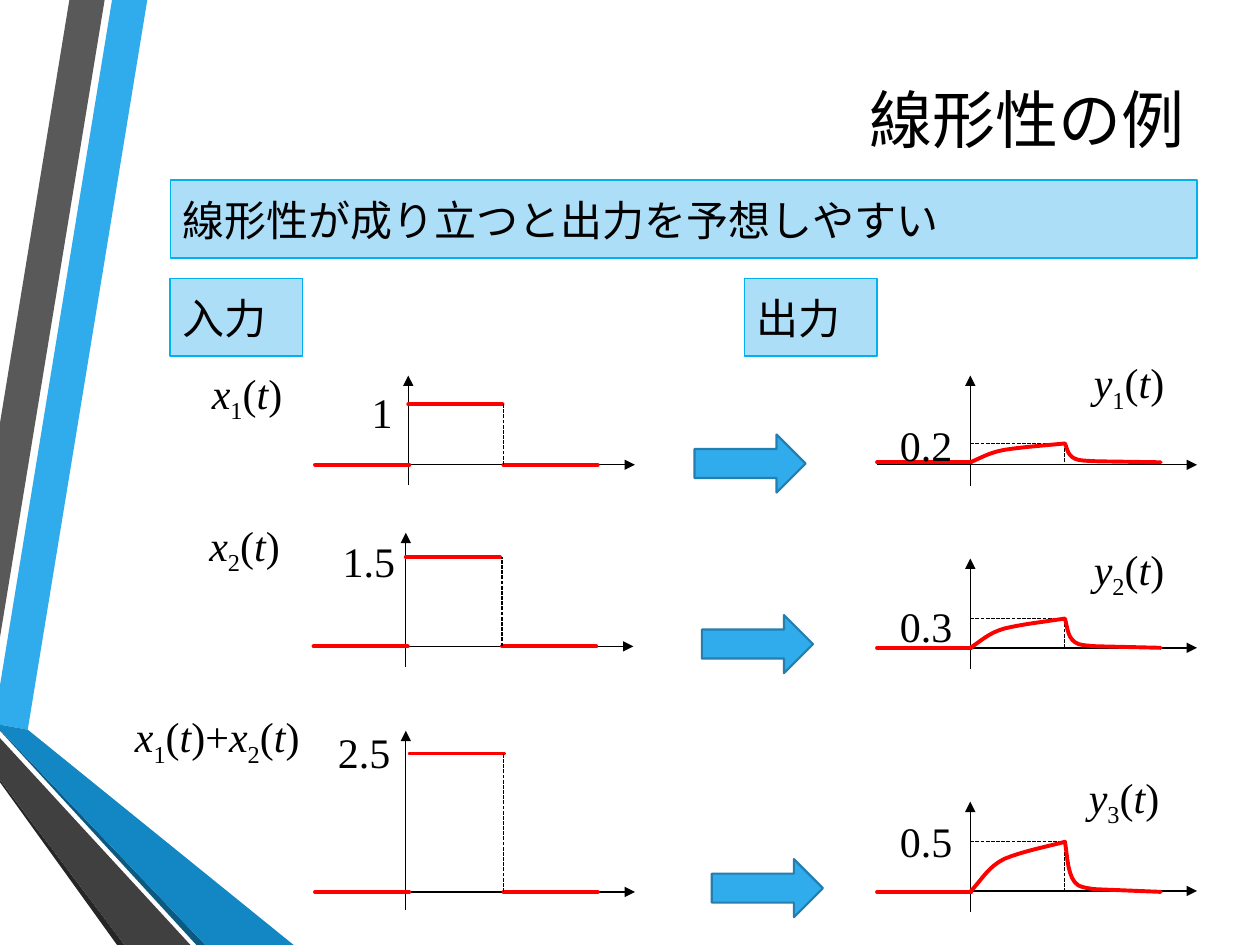
from dataclasses import dataclass
from itertools import groupby

from lxml.etree import SubElement
from pptx import Presentation
from pptx.dml.color import RGBColor
from pptx.enum.dml import MSO_LINE
from pptx.enum.shapes import MSO_CONNECTOR, MSO_SHAPE
from pptx.enum.text import MSO_ANCHOR, MSO_AUTO_SIZE, PP_ALIGN
from pptx.oxml.ns import qn
from pptx.util import Cm, Pt


@dataclass(frozen=True)
class Theme:
    title_font: str = "Cabin"
    body_font: str = "Times New Roman"
    title_size: float = 36
    body_size: float = 24
    line_spacing: float = 33.6
    paragraph_gap: float = 6
    thin: float = 0.75
    medium: float = 1.25
    thick: float = 2.25
    ink: str = "000000"
    signal: str = "FF0000"
    box_fill: str = "ACDEF7"
    box_line: str = "00B0F0"
    accent: str = "30ACEC"
    accent_line: str = "247FAF"


FACETS = [
    ("30ACEC", [(0, 13.82), (0, 14.61), (0.56, 14.71), (2.97, 0), (2.26, 0)]),
    ("595959", [(2.11, 0), (1.4, 0), (0, 8.53), (0, 12.85)]),
    ("262626", [(0, 15.72), (0, 15.77), (2.36, 19.05), (2.51, 19.05)]),
    ("0C5A82", [(0, 14.71), (0, 14.73), (3.96, 19.05), (4.14, 19.05)]),
    ("1287C3", [(0, 14.71), (4.14, 19.05), (5.92, 19.05), (0.56, 14.71), (0, 14.61)]),
    ("404040", [(0, 15.72), (2.51, 19.05), (3.84, 19.05), (0, 14.88)]),
]

# Response curve: cm from the axis, and share of the peak height.
RESPONSE = [
    [(0, 0), (0.23, 0.24), (0.36, 0.5), (0.69, 0.66)],
    [(0.69, 0.66), (1.09, 0.82), (1.5, 0.89), (1.91, 1)],
    [(1.91, 1), (1.96, 0.71), (1.96, 0.26), (2.18, 0.13)],
    [(2.18, 0.13), (2.26, 0.08), (2.51, 0.05), (2.59, 0.05)],
]
RESPONSE_END = (3.84, 0)
AXIS_LENGTH, PULSE = 6.45, 1.9

# left, base, axis, bottom, top, level, pulse start
INPUT_PLOTS = [
    (6.35, 9.37, 8.23, 9.78, 7.57, 8.15, 8.23),
    (6.32, 13.03, 8.18, 13.44, 10.74, 11.23, 8.18),
    (6.35, 17.98, 8.18, 18.34, 14.73, 15.19, 8.26),
]
# axis base, curve base, peak
OUTPUT_PLOTS = [(9.37, 9.32, 8.94), (13.06, 13.06, 12.47), (17.96, 17.98, 16.97)]
ARROWS = [(14, 8.76), (14.15, 12.4), (14.35, 17.32)]
FORMULAS = [
    ("x1(t)", 4.27, 7.37, 2.67), ("x2(t)", 4.22, 10.44, 2.67),
    ("x1(t)+x2(t)", 2.72, 14.3, 3.99), ("y1(t)", 22.05, 7.16, 2.67),
    ("y2(t)", 22.05, 10.92, 2.67), ("y3(t)", 21.95, 15.52, 2.67),
]
VALUES = [
    ("1", 7.49, 7.62, 1), ("1.5", 6.91, 10.62, 1.93), ("2.5", 6.81, 14.48, 1.93),
    ("0.2", 18.14, 8.28, 1.52), ("0.3", 18.14, 11.94, 1.52), ("0.5", 18.14, 16.28, 1.52),
]


def cm(*lengths):
    return [Cm(length) for length in lengths]


def bezier(points, steps=8):
    """Points along a cubic curve, without its start."""
    for step in range(1, steps + 1):
        t = step / steps
        weights = ((1 - t) ** 3, 3 * t * (1 - t) ** 2, 3 * t * t * (1 - t), t ** 3)
        yield tuple(sum(w * p[axis] for w, p in zip(weights, points)) for axis in (0, 1))


def character_kind(character):
    return "variable" if character.isalpha() else "index" if character.isdigit() else "sign"


class SlideBuilder:
    def __init__(self, slide, theme):
        self.slide, self.shapes, self.theme = slide, slide.shapes, theme

    def style_line(self, line, color, width, dashed=False, arrow=False):
        line.color.rgb = RGBColor.from_string(color)
        line.width = Pt(width)
        if dashed:
            line.dash_style = MSO_LINE.SQUARE_DOT
        properties = line._get_or_add_ln()
        if color == self.theme.signal:
            properties.set("cap", "rnd")
        if arrow:
            SubElement(properties, qn("a:tailEnd"), type="triangle")

    def style_shape(self, shape, fill, color, width):
        shape.shadow.inherit = False
        shape.fill.solid()
        shape.fill.fore_color.rgb = RGBColor.from_string(fill)
        if color:
            self.style_line(shape.line, color, width)
        else:
            shape.line.fill.background()

    def style_text(self, text_frame, size, font):
        text_frame.word_wrap = True
        text_frame.auto_size = MSO_AUTO_SIZE.NONE
        for run in text_frame.paragraphs[0].runs:
            run.font.name, run.font.size = font, Pt(size)
            run.font.color.rgb = RGBColor.from_string(self.theme.ink)

    def style_body(self, text_frame):
        theme, paragraph = self.theme, text_frame.paragraphs[0]
        text_frame.vertical_anchor = MSO_ANCHOR.TOP
        paragraph.alignment = PP_ALIGN.LEFT
        paragraph.line_spacing = Pt(theme.line_spacing)
        paragraph.space_before = paragraph.space_after = Pt(theme.paragraph_gap)
        self.style_text(text_frame, theme.body_size, theme.body_font)

    def place(self, shape, *box):
        shape.left, shape.top, shape.width, shape.height = cm(*box)

    def title(self, text, *box):
        shape = self.shapes.title
        self.place(shape, *box)
        shape.text_frame.text = text
        shape.text_frame.vertical_anchor = MSO_ANCHOR.MIDDLE
        shape.text_frame.paragraphs[0].alignment = PP_ALIGN.RIGHT
        self.style_text(shape.text_frame, self.theme.title_size, self.theme.title_font)

    def fill_box(self, shape, text):
        self.style_shape(shape, self.theme.box_fill, self.theme.box_line, self.theme.thin)
        shape.text_frame.text = text
        self.style_body(shape.text_frame)

    def body(self, text, *box):
        shape = self.slide.placeholders[1]
        self.place(shape, *box)
        self.fill_box(shape, text)
        properties = shape.text_frame.paragraphs[0]._p.get_or_add_pPr()
        properties.set("marL", "0")
        properties.set("indent", "0")
        SubElement(properties, qn("a:buNone"))

    def box(self, text, *box):
        self.fill_box(self.shapes.add_shape(MSO_SHAPE.RECTANGLE, *cm(*box)), text)

    def block_arrow(self, left, top):
        shape = self.shapes.add_shape(MSO_SHAPE.RIGHT_ARROW, *cm(left, top, 2.24, 1.17))
        self.style_shape(shape, self.theme.accent, self.theme.accent_line, self.theme.medium)

    def label(self, text, left, top, width, formula=False):
        """Plain text, or a formula with italic variables and lowered indices."""
        text_frame = self.shapes.add_textbox(*cm(left, top, width, 1.57)).text_frame
        text_frame.margin_left = text_frame.margin_right = 0
        text_frame.margin_top = text_frame.margin_bottom = 0
        if formula:
            for kind, characters in groupby(text, character_kind):
                run = text_frame.paragraphs[0].add_run()
                run.text = "".join(characters)
                run.font.italic = kind == "variable"
                if kind == "index":
                    run._r.get_or_add_rPr().set("baseline", "-25000")
        else:
            text_frame.text = text
        self.style_body(text_frame)

    def line(self, *ends, color=None, width=None, **options):
        connector = self.shapes.add_connector(MSO_CONNECTOR.STRAIGHT, *cm(*ends))
        SubElement(connector._element.spPr, qn("a:effectLst"))
        self.style_line(connector.line, color or self.theme.ink, width or self.theme.thin, **options)

    def signal(self, left, top, right):
        self.line(left, top, right, top, color=self.theme.signal, width=self.theme.thick)

    def outline(self, points, close):
        start, *others = [cm(*point) for point in points]
        builder = self.shapes.build_freeform(*start)
        builder.add_line_segments(others, close=close)
        return builder.convert_to_shape()

    def facet(self, color, points):
        self.style_shape(self.outline(points, True), color, None, 0)

    def axes(self, left, base, axis, bottom, top):
        self.line(left, base, left + AXIS_LENGTH, base, arrow=True)
        self.line(axis, bottom, axis, top, arrow=True)

    def input_plot(self, left, base, axis, bottom, top, level, start):
        self.axes(left, base, axis, bottom, top)
        fall = left + 2 * PULSE
        self.signal(left, base, left + PULSE)
        self.signal(start, level, start + PULSE)
        self.signal(fall, base, fall + PULSE)
        self.line(fall, base, fall, level, dashed=True)

    def output_plot(self, base, curve_base, peak, left=17.68, axis=19.56):
        self.axes(left, base, axis, base + 0.43, base - 1.8)
        self.signal(left, curve_base, left + PULSE)
        fall = axis + PULSE
        self.line(axis, peak, fall, peak, dashed=True)
        self.line(fall, curve_base, fall, peak, dashed=True)
        shares = [(0, 0), *(p for part in RESPONSE for p in bezier(part)), RESPONSE_END]
        height = curve_base - peak
        curve = self.outline([(axis + x, curve_base - height * y) for x, y in shares], False)
        curve.shadow.inherit = False
        curve.fill.background()
        self.style_line(curve.line, self.theme.signal, self.theme.thick)


def main():
    presentation = Presentation()
    presentation.slide_width, presentation.slide_height = cm(25.4, 19.05)
    slide = presentation.slides.add_slide(presentation.slide_layouts[1])
    builder = SlideBuilder(slide, Theme())
    for color, points in FACETS:
        builder.facet(color, points)
    builder.title("線形性の例", 2.72, 1.27, 21.41, 2.21)
    builder.body("線形性が成り立つと出力を予想しやすい", 3.43, 3.63, 20.7, 1.57)
    for text, left in (("入力", 3.43), ("出力", 15.01)):
        builder.box(text, left, 5.61, 2.67, 1.57)
    for input_plot, output_plot, arrow in zip(INPUT_PLOTS, OUTPUT_PLOTS, ARROWS):
        builder.input_plot(*input_plot)
        builder.output_plot(*output_plot)
        builder.block_arrow(*arrow)
    for formula in FORMULAS:
        builder.label(*formula, formula=True)
    for value in VALUES:
        builder.label(*value)
    presentation.save("out.pptx")


if __name__ == "__main__":
    main()
